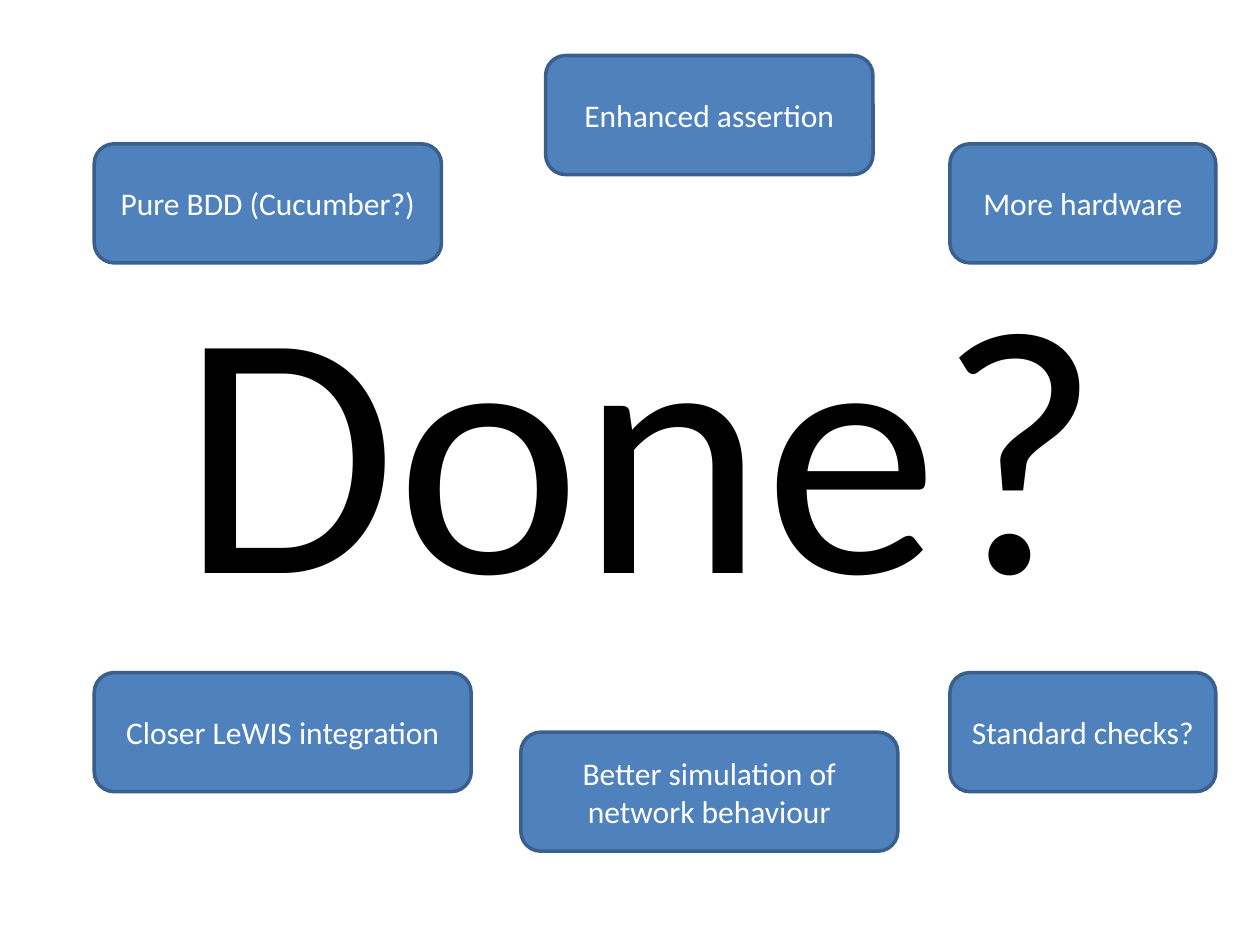
from dataclasses import dataclass

from pptx import Presentation
from pptx.dml.color import RGBColor
from pptx.enum.shapes import MSO_SHAPE
from pptx.enum.text import MSO_ANCHOR, PP_ALIGN
from pptx.util import Cm, Pt

ROUNDED = MSO_SHAPE.ROUNDED_RECTANGLE
MIDDLE = MSO_ANCHOR.MIDDLE
CENTER = PP_ALIGN.CENTER


@dataclass(frozen=True)
class Theme:
    font: str = "Calibri"
    question_color: str = "000000"
    idea_color: str = "FFFFFF"
    idea_fill: str = "4F81BD"
    idea_line: str = "3A5F8C"
    question_size: int = 200
    idea_size: int = 18
    line_width: int = 2


class SlideBuilder:
    def __init__(self, slide, theme):
        self.slide = slide
        self.theme = theme

    def set_label(self, shape, text, size, color):
        frame = shape.text_frame
        frame.word_wrap = True
        frame.vertical_anchor = MIDDLE
        frame.text = text
        paragraph = frame.paragraphs[0]
        paragraph.alignment = CENTER
        font = paragraph.runs[0].font
        font.name = self.theme.font
        font.size = Pt(size)
        font.color.rgb = RGBColor.from_string(color)

    def question(self, text, left, top, width, height):
        box = self.slide.shapes.add_textbox(Cm(left), Cm(top), Cm(width), Cm(height))
        self.set_label(box, text, self.theme.question_size, self.theme.question_color)

    def idea(self, text, left, top, width, height):
        card = self.slide.shapes.add_shape(
            ROUNDED, Cm(left), Cm(top), Cm(width), Cm(height)
        )
        card.shadow.inherit = False
        card.fill.solid()
        card.fill.fore_color.rgb = RGBColor.from_string(self.theme.idea_fill)
        card.line.color.rgb = RGBColor.from_string(self.theme.idea_line)
        card.line.width = Pt(self.theme.line_width)
        self.set_label(card, text, self.theme.idea_size, self.theme.idea_color)


def main():
    presentation = Presentation()
    presentation.slide_width = Cm(25.4)
    presentation.slide_height = Cm(19.05)
    slide = presentation.slides.add_slide(presentation.slide_layouts[6])
    builder = SlideBuilder(slide, Theme())

    builder.question("Done?", 1.5, 7.14, 22.86, 3.18)

    idea_height = 2.4
    left_edge, right_edge = 1.9, 19.15
    upper_row, lower_row = 2.9, 13.56
    right_width, wide = 5.36, 7.6
    ideas = [
        ("Pure BDD (Cucumber?)", left_edge, upper_row, 7),
        ("Enhanced assertion", 11, 1.12, 6.6),
        ("More hardware", right_edge, upper_row, right_width),
        ("Closer LeWIS integration", left_edge, lower_row, wide),
        ("Better simulation of network behaviour", 10.5, 14.76, wide),
        ("Standard checks?", right_edge, lower_row, right_width),
    ]
    for text, left, top, width in ideas:
        builder.idea(text, left, top, width, idea_height)

    presentation.save("out.pptx")


if __name__ == "__main__":
    main()
